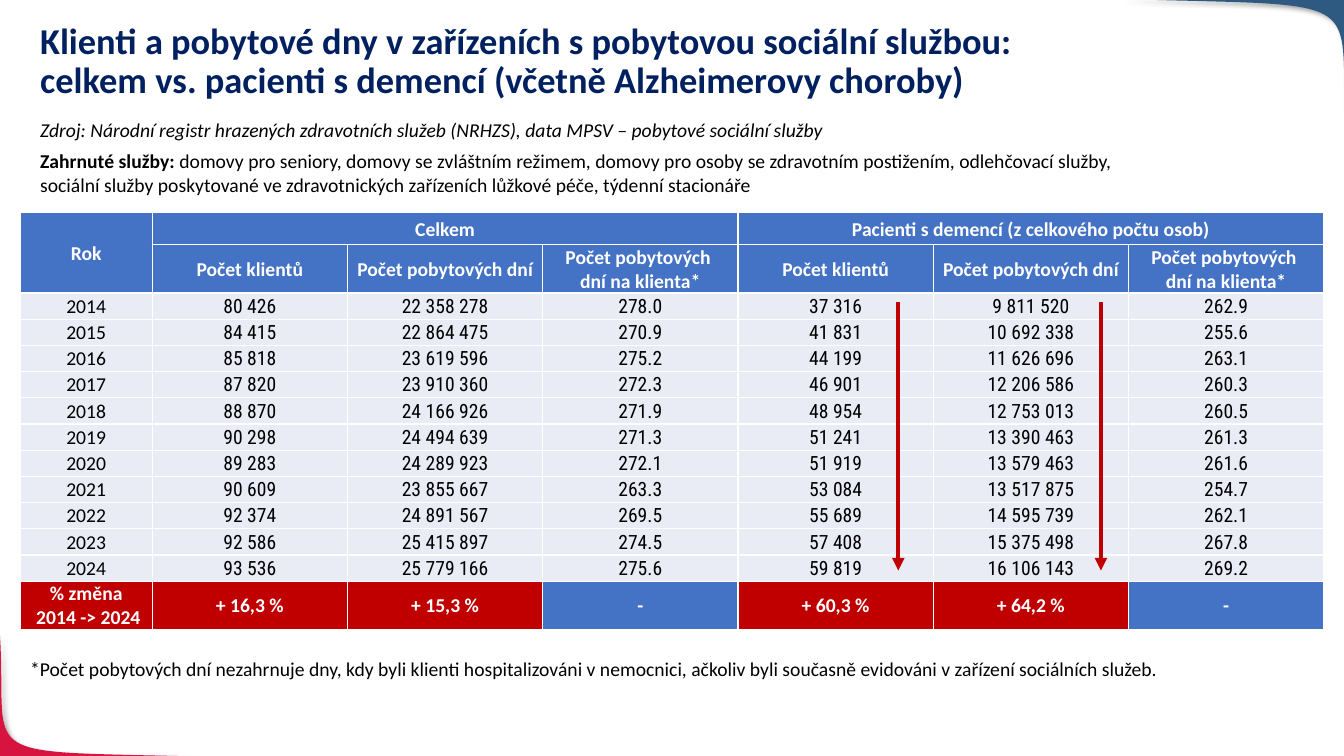
from lxml.etree import SubElement
from pptx import Presentation
from pptx.dml.color import RGBColor
from pptx.enum.shapes import MSO_CONNECTOR
from pptx.enum.text import MSO_ANCHOR, PP_ALIGN
from pptx.oxml.ns import qn
from pptx.util import Inches, Pt

COLUMNS, ROWS = 133.3, 75
NAVY, BLUE, RED, PALE = "002060", "4472C4", "C00000", "E9EBF5"
WHITE, BLACK = "FFFFFF", "000000"

BODY = {"name": "Calibri", "size": Pt(14), "bold": False}
STRONG = BODY | {"bold": True}
ITALIC = BODY | {"italic": True}
FIGURES = BODY | {"name": "Roboto Condensed"}
TITLE = STRONG | {"size": Pt(26)}

# Year: clients and days in total, clients and days of patients with dementia
CARE = {
    2014: (80426, 22358278, 37316, 9811520),
    2015: (84415, 22864475, 41831, 10692338),
    2016: (85818, 23619596, 44199, 11626696),
    2017: (87820, 23910360, 46901, 12206586),
    2018: (88870, 24166926, 48954, 12753013),
    2019: (90298, 24494639, 51241, 13390463),
    2020: (89283, 24289923, 51919, 13579463),
    2021: (90609, 23855667, 53084, 13517875),
    2022: (92374, 24891567, 55689, 14595739),
    2023: (92586, 25415897, 57408, 15375498),
    2024: (93536, 25779166, 59819, 16106143),
}
MEASURES = ["Počet klientů", "Počet pobytových dní",
            "Počet pobytových \ndní na klienta*"]


def color(hex_code):
    return RGBColor.from_string(hex_code)


def grouped(number):
    return f"{number:,}".replace(",", " ")


def growth(first, last):
    return f"+ {(last / first - 1) * 100:.1f} %".replace(".", ",")


def curve(start, pull_start, pull_end, end, steps=40):
    """Points along a cubic Bézier curve."""
    for step in range(steps + 1):
        t = step / steps
        weights = ((1 - t) ** 3, 3 * t * (1 - t) ** 2, 3 * t * t * (1 - t), t ** 3)
        yield tuple(sum(w * point[axis] for w, point in
                        zip(weights, (start, pull_start, pull_end, end)))
                    for axis in (0, 1))


class GridSlide:
    def __init__(self, deck):
        self.slide = deck.slides.add_slide(deck.slide_layouts[6])
        self.shapes = self.slide.shapes
        self.column = deck.slide_width / COLUMNS
        self.row = deck.slide_height / ROWS

    def x(self, columns):
        return round(columns * self.column)

    def y(self, rows):
        return round(rows * self.row)

    def box(self, left, top, width, height):
        return self.x(left), self.y(top), self.x(width), self.y(height)

    def add_runs(self, paragraph, pieces, ink):
        """Add (text, style) pieces; a vertical tab marks a line break."""
        for text, style in pieces:
            for index, line in enumerate(text.split("\v")):
                if index:
                    paragraph.add_line_break()
                run = paragraph.add_run()
                run.text = line
                for key, value in style.items():
                    setattr(run.font, key, value)
                run.font.color.rgb = color(ink)

    def text(self, place, pieces, ink=BLACK, spacing=None):
        frame = self.shapes.add_textbox(*self.box(*place)).text_frame
        frame.word_wrap = True
        frame.paragraphs[0].line_spacing = spacing
        self.add_runs(frame.paragraphs[0], pieces, ink)

    def corner(self, bezier, tip, fill):
        """Curved corner ornament with a soft shadow."""
        start, *others = [(self.x(x), self.y(y)) for x, y in [*curve(*bezier), tip]]
        builder = self.shapes.build_freeform(*start, scale=1.0)
        builder.add_line_segments(others, close=True)
        ornament = builder.convert_to_shape()
        ornament.shadow.inherit = False
        ornament.fill.solid()
        ornament.fill.fore_color.rgb = color(fill)
        ornament.line.fill.background()
        effects = ornament._element.spPr.find(qn("a:effectLst"))
        shadow = SubElement(effects, qn("a:outerShdw"), blurRad=str(Pt(4)),
                            dist=str(Pt(3)), dir="2700000", rotWithShape="0")
        shade = SubElement(shadow, qn("a:srgbClr"), val=BLACK)
        SubElement(shade, qn("a:alpha"), val="40000")

    def arrow(self, column, top, bottom):
        trend = self.shapes.add_connector(
            MSO_CONNECTOR.STRAIGHT, self.x(column), self.y(top),
            self.x(column), self.y(bottom))
        trend.line.color.rgb = color(RED)
        trend.line.width = Pt(3)
        SubElement(trend.line._get_or_add_ln(), qn("a:tailEnd"), type="triangle")
        SubElement(trend._element.spPr, qn("a:effectLst"))

    def table(self, left, top, widths, heights):
        grid = self.shapes.add_table(
            len(heights), len(widths),
            *self.box(left, top, sum(widths), sum(heights))).table
        grid.first_row = grid.horz_banding = False
        for column, width in zip(grid.columns, widths):
            column.width = self.x(width)
        for row, height in zip(grid.rows, heights):
            row.height = self.y(height)
        return grid

    def cell(self, cell, text, style, ink, fill):
        layout = {"margin_left": Inches(0.01), "margin_right": Inches(0.01),
                  "margin_top": Inches(0.01), "margin_bottom": 0,
                  "vertical_anchor": MSO_ANCHOR.MIDDLE}
        for key, value in layout.items():
            setattr(cell, key, value)
        for index, line in enumerate(text.split("\n")):
            frame = cell.text_frame
            paragraph = frame.add_paragraph() if index else frame.paragraphs[0]
            paragraph.alignment = PP_ALIGN.CENTER
            self.add_runs(paragraph, [(line, style)], ink)
        for side in ("lnL", "lnR", "lnT", "lnB"):
            border = SubElement(cell._tc.get_or_add_tcPr(), qn(f"a:{side}"), w=str(Pt(1)))
            SubElement(SubElement(border, qn("a:solidFill")), qn("a:srgbClr"), val=WHITE)
        cell.fill.solid()
        cell.fill.fore_color.rgb = color(fill)


def care_table(page):
    grid = page.table(2, 21.1, [13.1] + [19.37] * 6,
                      [3.2, 4.7] + [2.6] * len(CARE) + [4.7])
    headings = [["Rok", "Celkem", "", "", "Pacienti s demencí (z celkového počtu osob)", "", ""],
                ["", *MEASURES, *MEASURES]]
    for row, labels in enumerate(headings):
        for column, label in enumerate(labels):
            page.cell(grid.cell(row, column), label, STRONG, WHITE, BLUE)
    for first, last in (((0, 0), (1, 0)), ((0, 1), (0, 3)), ((0, 4), (0, 6))):
        grid.cell(*first).merge(grid.cell(*last))

    for row, (year, counts) in enumerate(CARE.items(), len(headings)):
        page.cell(grid.cell(row, 0), str(year), BODY, BLACK, PALE)
        for group in (0, 2):
            clients, days = counts[group:group + 2]
            values = grouped(clients), grouped(days), f"{days / clients:.1f}"
            for column, value in enumerate(values, 1 + group // 2 * 3):
                page.cell(grid.cell(row, column), value, FIGURES, BLACK, PALE)

    changes = [growth(*pair) for pair in zip(CARE[2014], CARE[2024])]
    summary = ["% změna\n 2014 -> 2024", *changes[:2], "-", *changes[2:], "-"]
    for column, change in enumerate(summary):
        page.cell(grid.cell(len(grid.rows) - 1, column), change, STRONG, WHITE,
                  BLUE if change == "-" else RED)


def main():
    deck = Presentation()
    deck.slide_width, deck.slide_height = Inches(13.33), Inches(7.5)
    page = GridSlide(deck)

    page.corner([(21.3, 75.1), (-3.4, 74.4), (0.8, 75.9), (0, 63)], (-0.1, 75.1), "D71440")
    page.corner([(111.1, -0.1), (137, 0.7), (132.6, -1), (133.5, 14.2)], (133.5, -0.1), "2E5980")

    page.text((3, 1.8, 123.2, 5.9), [(
        "Klienti a pobytové dny v zařízeních s pobytovou sociální službou: \v"
        "celkem vs. pacienti s demencí (včetně Alzheimerovy choroby)", TITLE)], NAVY, 0.9)
    care_table(page)
    page.text((3, 11.2, 82.6, 3.4), [(
        "Zdroj: Národní registr hrazených zdravotních služeb (NRHZS), "
        "data MPSV – pobytové sociální služby", ITALIC)])
    page.text((3, 14.3, 109.8, 5.7), [("Zahrnuté služby: ", STRONG), (
        "domovy pro seniory, domovy se zvláštním režimem, domovy pro osoby se zdravotním "
        "postižením, odlehčovací služby, sociální služby poskytované ve zdravotnických "
        "zařízeních lůžkové péče, týdenní stacionáře", BODY)])
    page.text((2, 64.7, 124.2, 3.4), [(
        "*Počet pobytových dní nezahrnuje dny, kdy byli klienti hospitalizováni v nemocnici, "
        "ačkoliv byli současně evidováni v zařízení sociálních služeb.", BODY)])
    for column in (89.1, 109.2):
        page.arrow(column, 30, 56.6)

    deck.save("out.pptx")


if __name__ == "__main__":
    main()
